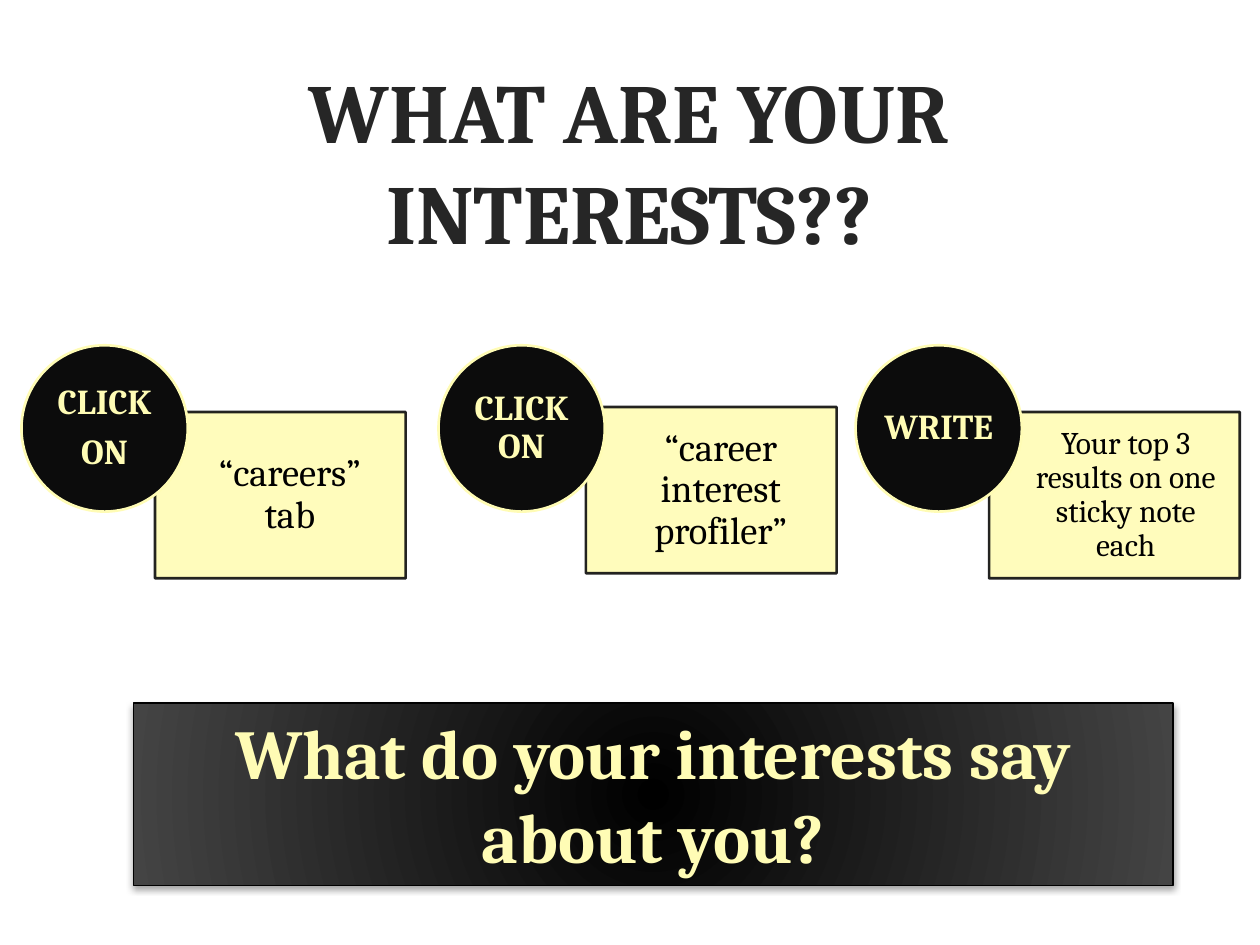
import pptx
import pptx.util
import pptx.dml.color
import pptx.enum.shapes
import pptx.enum.text
import pptx.oxml
import pptx.oxml.ns
import lxml.etree

Inches = pptx.util.Inches
Pt = pptx.util.Pt
Kind = pptx.enum.shapes.MSO_SHAPE
Anchor = pptx.enum.text.MSO_ANCHOR
qn = pptx.oxml.ns.qn

FONT = "Cambria"
CREAM = "FFFCB5"
INK = "0C0C0C"
BLACK = "000000"
PAD = (0.1, 0.05, 0.1, 0.05)


def tint(hue):
    return pptx.dml.color.RGBColor.from_string(hue)


def fade(fill, share):
    node = fill._xPr.find(".//" + qn("a:srgbClr"))
    lxml.etree.SubElement(node, qn("a:alpha"), val=str(share * 1000))


def write(shape, lines, size, hue, bold=False, pad=PAD, anchor=Anchor.MIDDLE,
          pitch=None, gap=0):
    frame = shape.text_frame
    frame.word_wrap = True
    frame.vertical_anchor = anchor
    (frame.margin_left, frame.margin_top,
     frame.margin_right, frame.margin_bottom) = map(Inches, pad)
    for i, line in enumerate(lines):
        para = frame.add_paragraph() if i else frame.paragraphs[0]
        para.alignment = pptx.enum.text.PP_ALIGN.CENTER
        if pitch:
            para.line_spacing = pitch
        if i and gap:
            para.space_before = Pt(gap)
        run = para.add_run()
        run.text = line
        run.font.name = FONT
        run.font.size = Pt(size)
        run.font.bold = bold
        run.font.color.rgb = tint(hue)


def draw(slide, kind, box, edge, width):
    shape = slide.shapes.add_shape(kind, *map(Inches, box))
    shape.shadow.inherit = False
    shape.line.color.rgb = tint(edge)
    shape.line.width = Pt(width)
    return shape


def title(slide, box):
    shape = slide.shapes.add_textbox(*map(Inches, box))
    write(shape, ["WHAT ARE YOUR INTERESTS??"], 48, "262626", True)


def step(slide, left, top, shift, drop, verb, note, size, inset):
    side = 1.32
    card = draw(slide, Kind.RECTANGLE, (left + shift, top + drop, 1.99, side), INK, 1.5)
    card.fill.solid()
    card.fill.fore_color.rgb = tint(CREAM)
    fade(card.fill, 90)
    fade(card.line.fill, 90)
    write(card, [note], size, BLACK, pad=(0.32, inset, inset, inset), pitch=0.9)
    disc = draw(slide, Kind.OVAL, (left, top, side, side), CREAM, 1.5)
    disc.fill.solid()
    disc.fill.fore_color.rgb = tint(INK)
    write(disc, verb, 20, CREAM, True, (0, 0, 0, 0), pitch=0.9, gap=7)


def steps(slide, left, top):
    rows = [
        (1.06, 0.53, ["CLICK", "ON"], "“careers” tab", 22, 0.17),
        (1.17, 0.49, ["CLICK ON"], "“career interest profiler”", 22, 0.17),
        (1.06, 0.53, ["WRITE"], "Your top 3 results on one sticky note each", 18, 0.14),
    ]
    for i, row in enumerate(rows):
        step(slide, left + 3.31 * i, top, *row)


def banner(slide, box):
    shape = draw(slide, Kind.RECTANGLE, box, BLACK, 0.75)
    shape.fill.gradient()
    for stop, hue in zip(shape.fill.gradient_stops, (BLACK, "444444")):
        stop.color.rgb = tint(hue)
    props = shape._element.spPr
    grad = props.find(qn("a:gradFill"))
    grad.remove(grad.find(qn("a:lin")))
    ring = lxml.etree.SubElement(grad, qn("a:path"), path="circle")
    lxml.etree.SubElement(ring, qn("a:fillToRect"), l="50000", t="50000", r="50000", b="50000")
    glow = lxml.etree.SubElement(
        props.find(qn("a:effectLst")), qn("a:outerShdw"), blurRad=str(Pt(4)),
        dist=str(Pt(1)), dir="5400000", rotWithShape="0")
    shade = lxml.etree.SubElement(glow, qn("a:srgbClr"), val=BLACK)
    lxml.etree.SubElement(shade, qn("a:alpha"), val="37000")
    write(shape, ["What do your interests say", "about you?"], 40, CREAM, True,
          anchor=Anchor.TOP)


def main():
    deck = pptx.Presentation()
    deck.slide_width = Inches(10)
    deck.slide_height = Inches(7.5)
    slide = deck.slides.add_slide(deck.slide_layouts[6])
    title(slide, (0.6, 0.48, 8.79, 1.58))
    steps(slide, 0.17, 2.74)
    banner(slide, (1.06, 5.58, 8.25, 1.45))
    deck.save("out.pptx")


if __name__ == "__main__":
    main()
